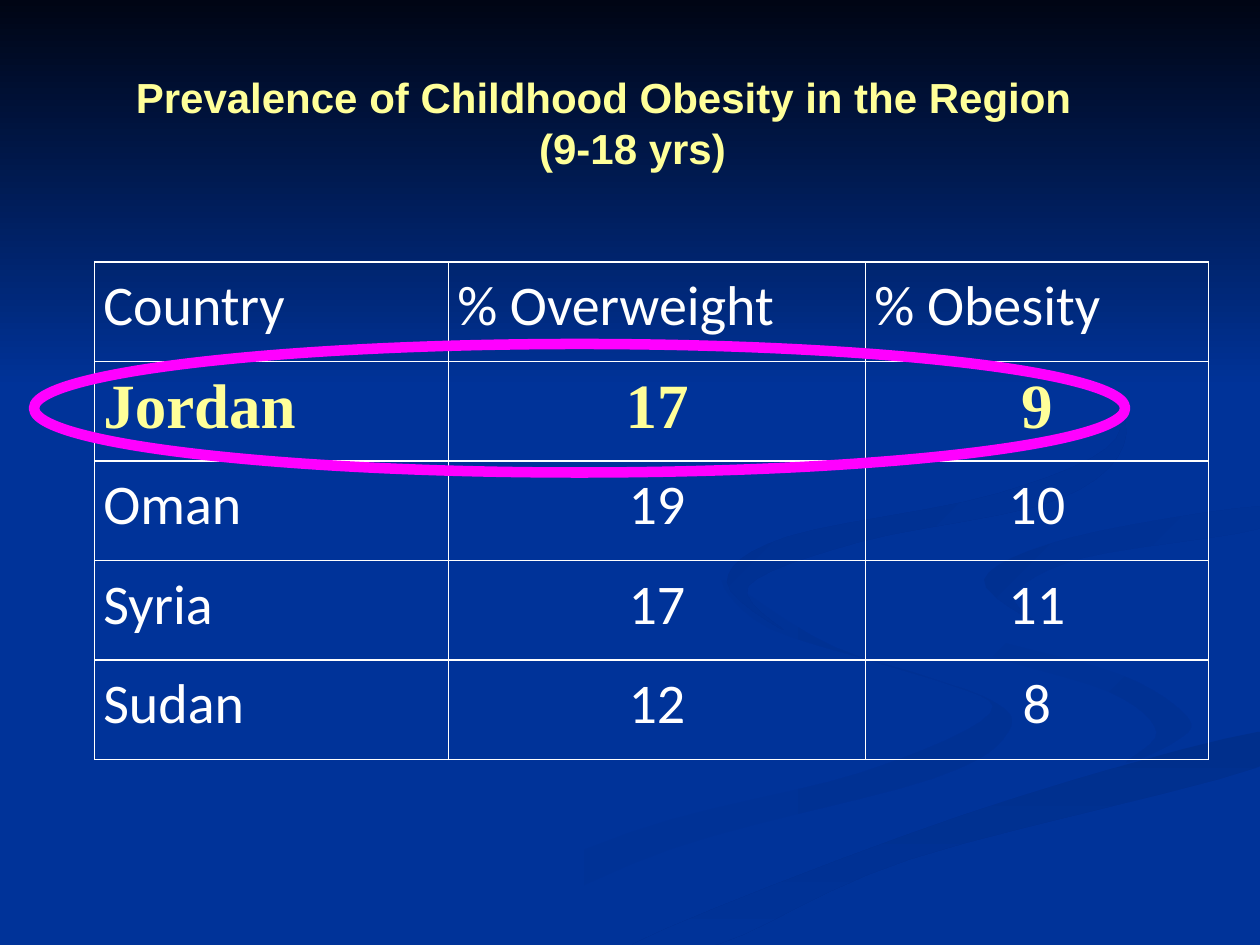
from lxml import etree
from pptx import Presentation
from pptx.dml.color import RGBColor
from pptx.enum.shapes import MSO_SHAPE
from pptx.enum.text import PP_ALIGN
from pptx.oxml.ns import qn
from pptx.util import Inches, Pt

LEFT, CENTER = PP_ALIGN.LEFT, PP_ALIGN.CENTER
BLUE, WHITE, YELLOW, MAGENTA = "003399", "FFFFFF", "FFFF99", "FF00FF"

# Content
TITLE = [("Prevalence of Childhood Obesity in the Region", LEFT), ("(9-18 yrs)", CENTER)]
ROWS = [
    ("Country", "% Overweight", "% Obesity"),
    ("Jordan", "17", "9"),
    ("Oman", "19", "10"),
    ("Syria", "17", "11"),
    ("Sudan", "12", "8"),
]
HIGHLIGHT_ROW = 1
COLUMN_WIDTHS = (2.81, 3.31, 2.72)
ROW_HEIGHT = 0.79

# Ribbons: start colour, end colour, clockwise angle, points on a smooth outline
RIBBONS = [
    (BLUE, "003193", 0, [
        (7.81, 5.53), (6.61, 5.13), (5.75, 4.6), (6.11, 4.99), (7.41, 5.39), (7.86, 5.66),
        (6.84, 6.13), (4.99, 6.61), (3, 7.49), (3.61, 7.49), (5.32, 6.74), (7.4, 6.18),
        (8, 5.81)]),
    (BLUE, "003193", 45, [
        (9.43, 5.7), (8.88, 5.35), (7.58, 4.98), (7.24, 4.64), (7.66, 5.12), (8.8, 5.49),
        (9.18, 5.81), (8.94, 6.05), (9.32, 5.89)]),
    ("002F8C", BLUE, 90, [
        (5.03, 7.49), (5.71, 7.49), (7.22, 6.82), (9.98, 6.09), (9.98, 5.81), (7.64, 6.47)]),
    ("003091", BLUE, 45, [
        (7.81, 4.6), (8.26, 4.96), (8.05, 4.72), (8.59, 4.43), (9.98, 4.2), (9.98, 4.02),
        (8.49, 4.27)]),
    ("002F8E", BLUE, 45, [
        (6.83, 4.3), (8.41, 3.96), (8.94, 3.44), (8.54, 2.83), (7.62, 2.33), (8.62, 2.92),
        (8.86, 3.48), (7.91, 3.92), (6.25, 4.26), (5.77, 4.62), (6.22, 5), (5.94, 4.65)]),
]
TOP_BAND = ("000514", BLUE, 90)
CURVE_STEPS = 6


def color(value):
    return RGBColor.from_string(value)


def smooth(points):
    """Closed Catmull-Rom curve through the points."""
    result = []
    for i in range(len(points)):
        neighbours = [points[(i + offset) % len(points)] for offset in (-1, 0, 1, 2)]
        for step in range(CURVE_STEPS):
            t = step / CURVE_STEPS
            result.append(tuple(
                b + t / 2 * (c - a + t * (2 * a - 5 * b + 4 * c - d
                                          + t * (3 * (b - c) + d - a)))
                for a, b, c, d in zip(*neighbours)))
    return result


def fill_gradient(shape, start, end, angle):
    shape.shadow.inherit = False
    shape.line.fill.background()
    shape.fill.gradient()
    shape.fill.gradient_angle = (360 - angle) % 360
    for stop, stop_color in zip(shape.fill.gradient_stops, (start, end)):
        stop.color.rgb = color(stop_color)


def style_paragraph(paragraph, text, name, size, hex_color, bold, alignment):
    paragraph.text = text
    paragraph.alignment = alignment
    font = paragraph.font
    font.name, font.size, font.bold = name, Pt(size), bold
    font.color.rgb = color(hex_color)


def add_borders(cell):
    properties = cell._tc.get_or_add_tcPr()
    for index, side in enumerate(("lnL", "lnR", "lnT", "lnB")):
        line = etree.Element(qn("a:" + side), w=str(Pt(1)))
        fill = etree.SubElement(line, qn("a:solidFill"))
        etree.SubElement(fill, qn("a:srgbClr"), val=WHITE)
        properties.insert(index, line)


presentation = Presentation()
presentation.slide_width, presentation.slide_height = Inches(10), Inches(7.5)
slide = presentation.slides.add_slide(presentation.slide_layouts[6])
slide.background.fill.solid()
slide.background.fill.fore_color.rgb = color(BLUE)

# Ribbons and dark top band
for start, end, angle, points in RIBBONS:
    corners = [(Inches(x), Inches(y)) for x, y in smooth(points)]
    builder = slide.shapes.build_freeform(*corners[0], scale=1.0)
    builder.add_line_segments(corners[1:], close=True)
    fill_gradient(builder.convert_to_shape(), start, end, angle)
band = slide.shapes.add_shape(MSO_SHAPE.RECTANGLE, 0, 0, Inches(10), Inches(3.08))
fill_gradient(band, *TOP_BAND)

# Table
table = slide.shapes.add_table(
    len(ROWS), len(COLUMN_WIDTHS), Inches(0.75), Inches(2.08),
    Inches(sum(COLUMN_WIDTHS)), Inches(ROW_HEIGHT * len(ROWS))).table
table.first_row = table.horz_banding = False
for column, width in zip(table.columns, COLUMN_WIDTHS):
    column.width = Inches(width)
for row_index, row in enumerate(ROWS):
    table.rows[row_index].height = Inches(ROW_HEIGHT)
    highlighted = row_index == HIGHLIGHT_ROW
    name, size, text_color = (
        ("Times New Roman", 36, YELLOW) if highlighted else ("Calibri", 32, WHITE))
    for column_index, text in enumerate(row):
        cell = table.cell(row_index, column_index)
        cell.fill.background()
        cell.margin_left = cell.margin_right = Inches(0.07)
        cell.margin_top = cell.margin_bottom = 0
        add_borders(cell)
        paragraph = cell.text_frame.paragraphs[0]
        alignment = CENTER if row_index and column_index else LEFT
        style_paragraph(paragraph, text, name, size, text_color, highlighted, alignment)
        paragraph.line_spacing = 1.15

# Title
title = slide.shapes.add_textbox(Inches(0.98), Inches(0.52), Inches(8.08), Inches(0.9))
frame = title.text_frame
frame.word_wrap = True
for index, (text, alignment) in enumerate(TITLE):
    paragraph = frame.add_paragraph() if index else frame.paragraphs[0]
    style_paragraph(paragraph, text, "Arial", 24, YELLOW, True, alignment)

# Ring around the highlighted row
ring = slide.shapes.add_shape(
    MSO_SHAPE.OVAL, Inches(0.27), Inches(2.73), Inches(8.66), Inches(1.02))
ring.shadow.inherit = False
ring.fill.background()
ring.line.color.rgb = color(MAGENTA)
ring.line.width = Pt(6)

presentation.save("out.pptx")
